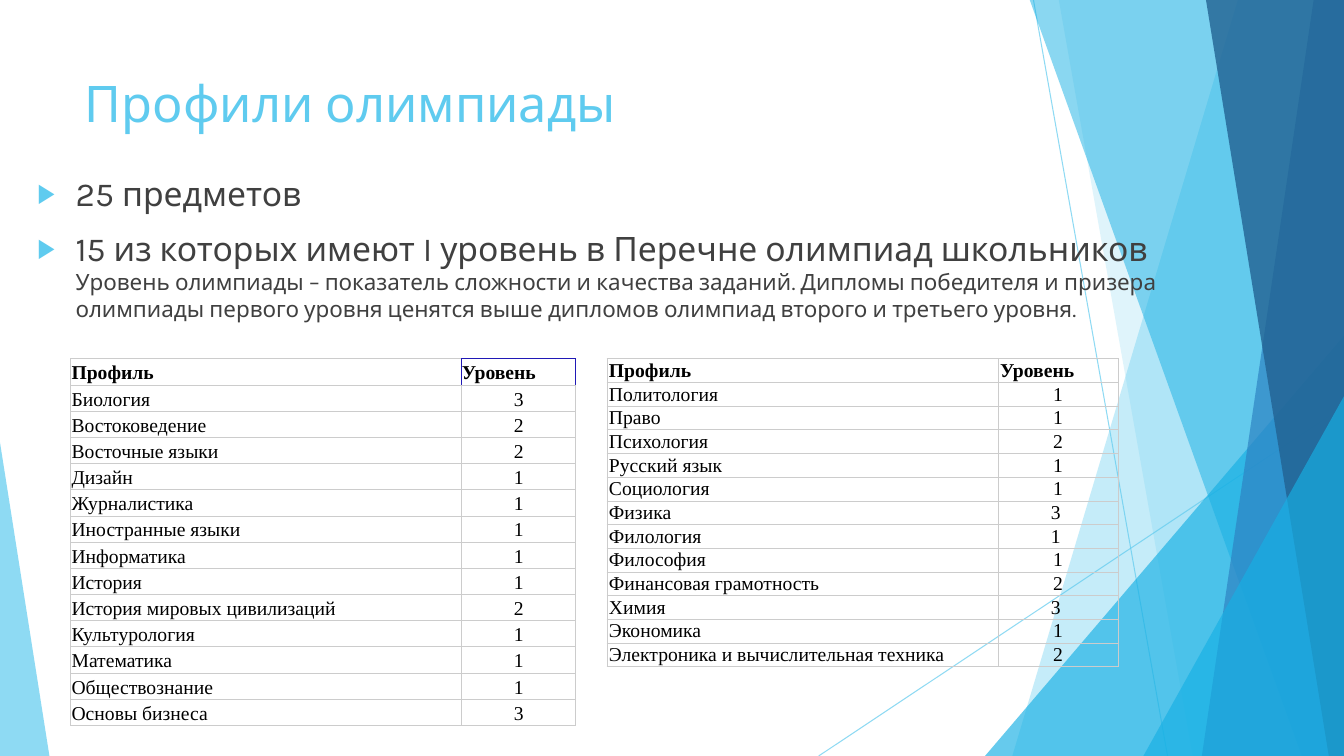
import pptx
import pptx.util
import pptx.dml.color
import pptx.enum.shapes
import pptx.enum.text
import pptx.oxml.ns
import lxml.etree

Inches, Pt = pptx.util.Inches, pptx.util.Pt
RGBColor = pptx.dml.color.RGBColor
PP_ALIGN = pptx.enum.text.PP_ALIGN
ANCHOR = pptx.enum.text.MSO_ANCHOR
qn = pptx.oxml.ns.qn

SKY = RGBColor(0x5F, 0xCB, 0xEF)
CYAN = RGBColor(0x17, 0xB0, 0xE4)
BLUE = RGBColor(0x2E, 0x83, 0xC3)
NAVY = RGBColor(0x22, 0x62, 0x92)
GRAPHITE = RGBColor(0x40, 0x40, 0x40)
BLACK = RGBColor(0, 0, 0)
GRID = RGBColor(0xCC, 0xCC, 0xCC)
INDIGO = RGBColor(0x20, 0x19, 0xB6)
WIDTH, HEIGHT = 13.33, 7.5

TITLE = "Профили олимпиады"
SUBJECTS = "25 предметов"
FIRST_LEVEL = "15 из которых имеют I уровень в Перечне олимпиад школьников"
LEVEL_NOTE = ("Уровень олимпиады – показатель сложности и качества заданий. "
              "Дипломы победителя и призера олимпиады первого уровня ценятся выше "
              "дипломов олимпиад второго и третьего уровня.")
HEADER = ("Профиль", "Уровень")
PROFILES_LEFT = [
    HEADER, ("Биология", "3"), ("Востоковедение", "2"), ("Восточные языки", "2"),
    ("Дизайн", "1"), ("Журналистика", "1"), ("Иностранные языки", "1"),
    ("Информатика", "1"), ("История", "1"), ("История мировых цивилизаций", "2"),
    ("Культурология", "1"), ("Математика", "1"), ("Обществознание", "1"),
    ("Основы бизнеса", "3"),
]
PROFILES_RIGHT = [
    HEADER, ("Политология", "1"), ("Право", "1"), ("Психология", "2"),
    ("Русский язык", "1"), ("Социология", "1"), ("Физика", "3 "),
    ("Филология", "1 "), ("Философия", "1"), ("Финансовая грамотность", "2"),
    ("Химия", "3 "), ("Экономика", "1"),
    ("Электроника и вычислительная техника", "2"),
]
RAYS = [(10.25, 0, 11.58, HEIGHT), (WIDTH, 4.03, 8.12, HEIGHT)]
# Bands reach the right edge: x at top, x at bottom, colour, opacity in percent.
# Triangles stand on the bottom edge: left, top, width, apex, colour, opacity.
FACETS = [
    ("band", 12.28, 10.04, SKY, 36),
    ("band", 10.5, 11.83, SKY, 20),
    ("triangle", 9.77, 3.33, 3.56, 1, CYAN, 66),
    ("band", 10.21, 12.91, CYAN, 50),
    ("band", 13.03, 11.92, BLUE, 70),
    ("band", 11.96, 13.18, NAVY, 80),
    ("triangle", 11.34, 3.93, 1.99, 1, CYAN, 66),
    ("triangle", 0, 4.39, 0.49, 0, SKY, 70),
]

deck = pptx.Presentation()
deck.slide_width, deck.slide_height = Inches(WIDTH), Inches(HEIGHT)
slide = deck.slides.add_slide(deck.slide_layouts[1])
shapes = slide.shapes


def write(paragraph, text, size, color, font="Karla", bold=False, align=PP_ALIGN.LEFT):
    paragraph.alignment = align
    run = paragraph.add_run()
    run.text = text
    run.font.name, run.font.size, run.font.bold = font, Pt(size), bold
    run.font.color.rgb = color


def add_xml(parent, tag, **attributes):
    return lxml.etree.SubElement(parent, qn(tag), attributes)


def set_opacity(shape, percent):
    color = shape._element.spPr.find(".//" + qn("a:srgbClr"))
    add_xml(color, "a:alpha", val=str(percent * 1000))


def add_ray(x1, y1, x2, y2):
    ray = shapes.add_connector(pptx.enum.shapes.MSO_CONNECTOR.STRAIGHT,
                               Inches(x1), Inches(y1), Inches(x2), Inches(y2))
    ray.line.color.rgb, ray.line.width = SKY, Pt(0.75)
    set_opacity(ray, 70)
    add_xml(ray._element.spPr, "a:effectLst")


def add_facet(kind, *geometry, color, opacity):
    if kind == "band":
        top_x, bottom_x = geometry
        outline = shapes.build_freeform(Inches(top_x), Inches(-0.01))
        outline.add_line_segments([(Inches(x), Inches(y)) for x, y in (
            (WIDTH, -0.01), (WIDTH, HEIGHT), (bottom_x, HEIGHT))])
        facet = outline.convert_to_shape()
    else:
        left, top, width, apex = geometry
        facet = shapes.add_shape(
            pptx.enum.shapes.MSO_SHAPE.ISOSCELES_TRIANGLE,
            Inches(left), Inches(top), Inches(width), Inches(HEIGHT - top))
        facet.adjustments[0] = apex
    facet.shadow.inherit = False
    facet.fill.solid()
    facet.fill.fore_color.rgb = color
    facet.line.fill.background()
    set_opacity(facet, opacity)


def place(holder, left, top, width, height):
    """Position a placeholder, anchor its text at the top and bring it forward."""
    holder.left, holder.top = Inches(left), Inches(top)
    holder.width, holder.height = Inches(width), Inches(height)
    frame = holder.text_frame
    frame.vertical_anchor, frame.word_wrap = ANCHOR.TOP, True
    frame.auto_size = pptx.enum.text.MSO_AUTO_SIZE.NONE
    shapes._spTree.append(holder._element)
    return frame


def set_bullet(paragraph):
    paragraph.space_before = Pt(10)
    props = paragraph._p.get_or_add_pPr()
    props.set("marL", str(Inches(0.38)))
    props.set("indent", str(Inches(-0.38)))
    add_xml(add_xml(props, "a:buClr"), "a:srgbClr", val=str(SKY))
    add_xml(props, "a:buSzPct", val="80000")
    add_xml(props, "a:buFont", typeface="Arial")
    add_xml(props, "a:buChar", char="▶")


def set_borders(cell, **colors):
    props = cell._tc.get_or_add_tcPr()
    for position, side in enumerate("LRTB"):
        line = add_xml(props, "a:ln" + side, w=str(Pt(0.75)))
        add_xml(add_xml(line, "a:solidFill"), "a:srgbClr", val=str(colors.get(side, GRID)))
        props.insert(position, line)


def add_profiles(rows, left, widths, row_height, insets, header_borders=({}, {})):
    table = shapes.add_table(len(rows), 2, Inches(left), Inches(3.56),
                             Inches(sum(widths)), Inches(row_height * len(rows))).table
    table.first_row = table.horz_banding = False
    for column, width in zip(table.columns, widths):
        column.width = Inches(width)
    for r, row in enumerate(rows):
        table.rows[r].height = Inches(row_height)
        for c, text in enumerate(row):
            cell = table.cell(r, c)
            cell.margin_left = cell.margin_right = Inches(insets[c])
            cell.margin_top = cell.margin_bottom = Inches(0.01)
            cell.vertical_anchor = ANCHOR.BOTTOM
            cell.fill.background()
            set_borders(cell, **(header_borders[c] if r == 0 else {}))
            write(cell.text_frame.paragraphs[0], text, 14, BLACK,
                  font="Times New Roman", bold=r == 0,
                  align=PP_ALIGN.CENTER if r and c else PP_ALIGN.LEFT)


for ray_ends in RAYS:
    add_ray(*ray_ends)
for *geometry, color, opacity in FACETS:
    add_facet(*geometry, color=color, opacity=opacity)

heading = place(shapes.title, 0.74, 0.67, 9.4, 1.44)
write(heading.paragraphs[0], TITLE, 36, SKY)

summary = place(slide.placeholders[1], 0.27, 1.67, 11.97, 4.68)
subjects, levels = summary.paragraphs[0], summary.add_paragraph()
write(subjects, SUBJECTS, 24, GRAPHITE)
write(levels, FIRST_LEVEL, 24, GRAPHITE)
levels.add_line_break()
add_xml(levels._p[-1], "a:rPr", sz="2400")
write(levels, LEVEL_NOTE, 16, GRAPHITE)
for point in (subjects, levels):
    set_bullet(point)

add_profiles(PROFILES_LEFT, 0.7, (3.88, 1.13), 0.26, (0.01, 0),
             header_borders=({"R": INDIGO}, {"L": INDIGO, "T": INDIGO, "R": INDIGO}))
add_profiles(PROFILES_RIGHT, 6.02, (3.88, 1.19), 0.23, (0.02, 0.02))

deck.save("out.pptx")
